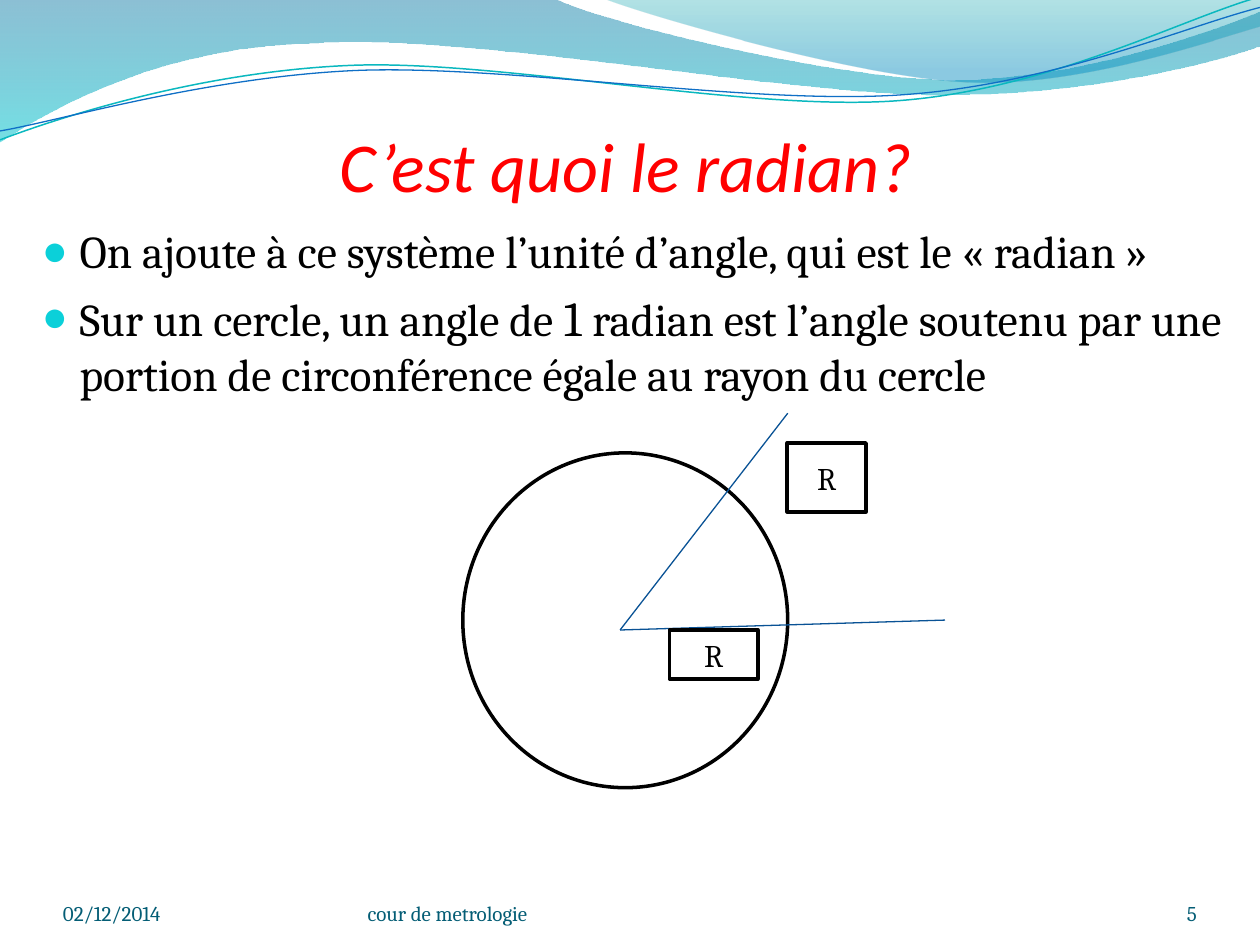
import math
import pptx
import pptx.util
import pptx.dml.color
import pptx.enum.shapes
import pptx.enum.text
import pptx.oxml
import pptx.oxml.ns
import lxml.etree

Cm = pptx.util.Cm
Pt = pptx.util.Pt
ALIGN = pptx.enum.text.PP_ALIGN
ANCHOR = pptx.enum.text.MSO_ANCHOR
SHAPE = pptx.enum.shapes.MSO_SHAPE
TILT = 2.7

BANDS = [
    ([(0, 0), (11.18, -0.03), (12.09, 0.43, 16.87, 1.6, 19.25, 1.6),
      (21.67, 1.6, 24.33, 0.66, 25.4, 0.23), (25.43, 0.91),
      (24.97, 1.12, 22.1, 1.93, 18.95, 1.91), (15.8, 1.91, 9.7, 0.71, 6.53, 0.86),
      (3.28, 0.91, 1.17, 2.11, -0.03, 2.87), (0, 0)],
     [(0, "0074A1", 45), (1, "00C6CF", 55)]),
    ([(12.17, -0.03), (12.93, 0.28, 17.32, 1.57, 19.53, 1.65),
      (21.74, 1.75, 24.41, 0.81, 25.4, 0.53), (25.4, 0), (12.17, -0.03)],
     [(0, "00A1A9", 30), (0.8, "008BBF", 45)]),
]
WAVES = [
    ([(0, 2.82), (1.22, 2.36, 4.01, 1.45, 7.04, 1.32),
      (10.03, 1.19, 15.06, 2.26, 18.11, 2.03),
      (21.16, 1.8, 23.83, 0.38, 25.35, -0.05)], "0AB8BF", 0.85),
    ([(0, 2.64), (1.19, 2.44, 4.17, 1.55, 7.19, 1.42),
      (10.24, 1.3, 15.16, 2.13, 18.21, 1.91),
      (21.23, 1.7, 23.9, 0.53, 25.4, 0.15)], "0F6FC6", 0.75),
]
POINTS = [
    [("On ajoute à ce système l’unité d’angle, qui est le « radian »", 26)],
    [("Sur un cercle, un angle de ", 26), ("1 ", 28),
     ("radian est l’angle soutenu par une portion de circonférence "
      "égale au rayon du cercle", 26)],
]
FOOT = [
    ("02/12/2014", 1.27, 5.92, ALIGN.LEFT),
    ("5", 22.02, 2.11, ALIGN.RIGHT),
    ("cour de metrologie", 7.41, 9.32, ALIGN.LEFT),
]


def paint(part, shade):
    part.rgb = pptx.dml.color.RGBColor.from_string(shade)


def flood(fill, shade):
    fill.solid()
    paint(fill.fore_color, shade)


def stroke(shape, shade, width):
    flood(shape.line.fill, shade)
    shape.line.width = Pt(width)


def add_tag(parent, tag, **attrs):
    node = lxml.etree.SubElement(parent, pptx.oxml.ns.qn(tag))
    for name, value in attrs.items():
        node.set(name, value)
    return node


def add_run(para, text, size, shade="000000", face="Cambria"):
    run = para.add_run()
    run.text = text
    run.font.size = Pt(size)
    run.font.name = face
    paint(run.font.color, shade)
    return run


def place(shape, left, top, width, height):
    shape.left, shape.top = Cm(left), Cm(top)
    shape.width, shape.height = Cm(width), Cm(height)


def set_frame(frame, anchor, sides=None, top=None, base=None):
    frame.word_wrap = True
    frame.auto_size = pptx.enum.text.MSO_AUTO_SIZE.NONE
    frame.vertical_anchor = anchor
    if sides is not None:
        frame.margin_left = frame.margin_right = Cm(sides)
        frame.margin_top, frame.margin_bottom = Cm(top), Cm(base)


def turn(x, y, angle, mid=(12.68, 1.48)):
    sine, cosine = math.sin(math.radians(angle)), math.cos(math.radians(angle))
    x, y = x - mid[0], y - mid[1]
    return mid[0] + x * cosine - y * sine, mid[1] + x * sine + y * cosine


def add_curve(slide, path, close, angle=0):
    spots = [turn(part[i], part[i + 1], angle)
             for part in path for i in range(0, len(part), 2)]
    spots = [(Cm(x), Cm(y)) for x, y in spots]
    pen = slide.shapes.build_freeform(*spots[0])
    pen.add_line_segments(spots[1:], close=close)
    shape = pen.convert_to_shape()
    shape.shadow.inherit = False
    shape.rotation = -angle % 360
    lines = iter(list(shape._element.iter(pptx.oxml.ns.qn("a:lnTo"))))
    for part in path[1:]:
        first = next(lines)
        if len(part) == 6:
            bend = add_tag(first.getparent(), "a:cubicBezTo")
            first.addprevious(bend)
            for line in (first, next(lines), next(lines)):
                bend.append(line[0])
                line.getparent().remove(line)
    return shape


def add_band(slide, path, stops):
    shape = add_curve(slide, path, True)
    shape.line.fill.background()
    shape.fill.gradient()
    shape.fill.gradient_angle = 270
    for stop, (spot, shade, alpha) in zip(shape.fill.gradient_stops, stops):
        stop.position = spot
        paint(stop.color, shade)
    nodes = shape._element.spPr.iter(pptx.oxml.ns.qn("a:srgbClr"))
    for node, (spot, shade, alpha) in zip(nodes, stops):
        add_tag(node, "a:alpha", val=str(alpha * 1000))


def add_wave(slide, path, shade, width):
    shape = add_curve(slide, path, False, TILT)
    shape.fill.background()
    stroke(shape, shade, width)


def raise_up(shape):
    shape._element.getparent().append(shape._element)


def fill_title(title):
    place(title, 1.19, 0.99, 22.86, 3.18)
    set_frame(title.text_frame, ANCHOR.BOTTOM, 0, 0.13, 0)
    para = title.text_frame.paragraphs[0]
    para.alignment = ALIGN.CENTER
    add_run(para, "C’est quoi le radian?", 40, "FF0000", "Calibri").font.italic = True
    raise_up(title)


def fill_body(body):
    place(body, 0.59, 4.37, 24.81, 12.19)
    frame = body.text_frame
    set_frame(frame, ANCHOR.TOP)
    for rank, runs in enumerate(POINTS):
        para = frame.add_paragraph() if rank else frame.paragraphs[0]
        para.space_before = Pt(5.4)
        props = para._p.get_or_add_pPr()
        props.set("marL", str(Cm(0.76)))
        props.set("indent", str(-Cm(0.76)))
        add_tag(add_tag(props, "a:buClr"), "a:srgbClr", val="0BD0D9")
        add_tag(props, "a:buSzPct", val="95000")
        add_tag(props, "a:buChar", char="●")
        for text, size in runs:
            add_run(para, text, size)
    raise_up(body)


def add_form(slide, kind, box, text=None):
    shape = slide.shapes.add_shape(kind, *map(Cm, box))
    shape.shadow.inherit = False
    flood(shape.fill, "FFFFFF")
    stroke(shape, "000000", 2)
    if text:
        set_frame(shape.text_frame, ANCHOR.MIDDLE)
        para = shape.text_frame.paragraphs[0]
        para.alignment = ALIGN.CENTER
        add_run(para, text, 18)


def add_ray(slide, start, end):
    kind = pptx.enum.shapes.MSO_CONNECTOR.STRAIGHT
    ray = slide.shapes.add_connector(kind, *map(Cm, start + end))
    stroke(ray, "095295", 0.75)
    add_tag(ray._element.spPr, "a:effectLst")


def add_foot(slide, text, left, width, align):
    box = slide.shapes.add_textbox(Cm(left), Cm(17.65), Cm(width), Cm(1.02))
    set_frame(box.text_frame, ANCHOR.BOTTOM, 0, 0, 0)
    para = box.text_frame.paragraphs[0]
    para.alignment = align
    add_run(para, text, 12, "045D75")


def main():
    deck = pptx.Presentation()
    deck.slide_width, deck.slide_height = Cm(25.4), Cm(19.05)
    slide = deck.slides.add_slide(deck.slide_layouts[1])
    for band in BANDS:
        add_band(slide, *band)
    for wave in WAVES:
        add_wave(slide, *wave)
    fill_title(slide.shapes.title)
    fill_body(slide.placeholders[1])
    add_form(slide, SHAPE.OVAL, (9.33, 9.13, 6.55, 6.75))
    for end in ((19.05, 12.5), (15.88, 8.33)):
        add_ray(slide, (12.5, 12.7), end)
    for box in ((15.87, 8.93, 1.59, 1.39), (13.5, 12.7, 1.78, 0.99)):
        add_form(slide, SHAPE.RECTANGLE, box, "R")
    for foot in FOOT:
        add_foot(slide, *foot)
    deck.save("out.pptx")


if __name__ == "__main__":
    main()
